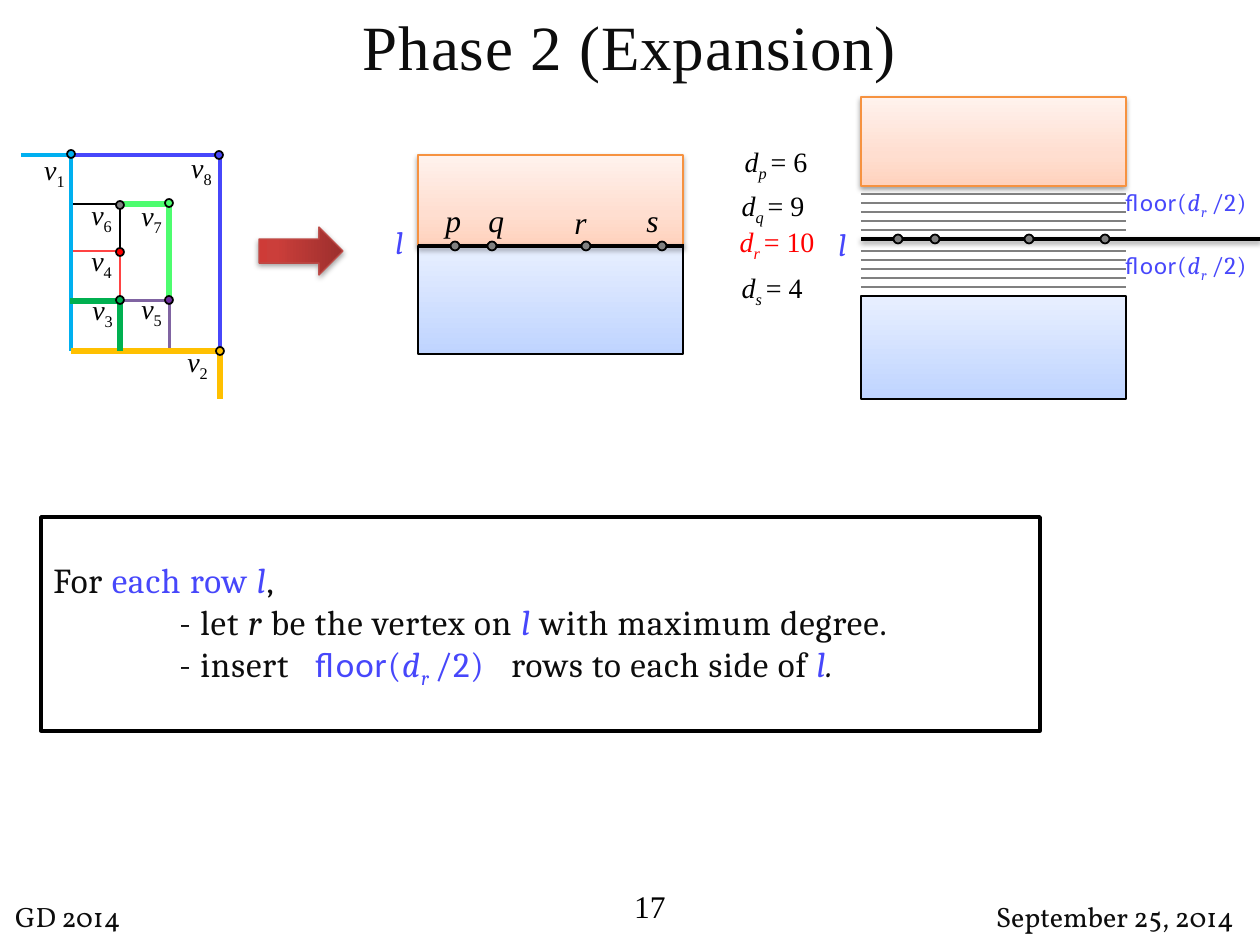
from lxml.etree import SubElement
from pptx import Presentation
from pptx.dml.color import RGBColor
from pptx.enum.shapes import MSO_CONNECTOR, MSO_SHAPE
from pptx.enum.text import MSO_ANCHOR, MSO_AUTO_SIZE, PP_ALIGN
from pptx.oxml.ns import qn
from pptx.util import Emu, Pt

SCALE = 914400 / 126
BLACK, INK, BLUE, GRAY, RED = "000000", "0D0D0D", "4747FB", "808080", "FF0000"
PEACH = [(0, "FFD2BD"), (35, "FFDED0"), (100, "FFF2ED")]
SKY = [(0, "BFD4FF"), (96, "E6EEFF")]
CRIMSON = [(0, "9C2F2D"), (80, "CB3E3A"), (100, "CE3B37")]
SERIF, BOOK, SANS, FOOTER = "Times New Roman", "Cambria", "Calibri", "Vollkorn"
LEFT, CENTER, RIGHT = PP_ALIGN.LEFT, PP_ALIGN.CENTER, PP_ALIGN.RIGHT
HALF_DEGREE = [("floor", "", BLUE, SANS), ("(", "", BLUE), ("d", "i", BLUE),
               ("r ", "i_", BLUE), ("/2)", "", BLUE)]


def px(*lengths):
    return [Emu(round(length * SCALE)) for length in lengths]


def rgb(color):
    return RGBColor.from_string(color)


class Sketch:
    """Draws styled elements on the current page."""

    def __init__(self, page):
        self.shapes = page.shapes

    def outline(self, item, color, width):
        item.line.color.rgb = rgb(color)
        item.line.width = Pt(width)

    def cast_shadow(self, effects, alpha=38):
        shadow = SubElement(effects, qn("a:outerShdw"), blurRad=str(Pt(3.1)),
                            dist=str(Pt(1.6)), dir="5400000", rotWithShape="0")
        color = SubElement(shadow, qn("a:srgbClr"), val=BLACK)
        SubElement(color, qn("a:alpha"), val=str(alpha * 1000))

    def shape(self, kind, area, fill=None, line=None, width=1.0):
        item = self.shapes.add_shape(kind, *px(*area))
        item.shadow.inherit = False
        if fill:
            item.fill.solid()
            item.fill.fore_color.rgb = rgb(fill)
        else:
            item.fill.background()
        if line:
            self.outline(item, line, width)
        else:
            item.line.fill.background()
        return item

    def gradient(self, kind, area, stops, line, width, shadow=0):
        item = self.shape(kind, area, None, line, width)
        item.fill.gradient()
        item.fill.gradient_angle = 90
        properties = item._element.spPr
        stop_list = properties.find(qn("a:gradFill")).find(qn("a:gsLst"))
        for stop in list(stop_list):
            stop_list.remove(stop)
        for position, color in stops:
            stop = SubElement(stop_list, qn("a:gs"), pos=str(position * 1000))
            SubElement(stop, qn("a:srgbClr"), val=color)
        if shadow:
            self.cast_shadow(properties.find(qn("a:effectLst")), shadow)
        return item

    def line(self, start, end, color, width, shadow=False):
        item = self.shapes.add_connector(MSO_CONNECTOR.STRAIGHT, *px(*start, *end))
        self.outline(item, color, width)
        effects = SubElement(item._element.spPr, qn("a:effectLst"))
        if shadow:
            self.cast_shadow(effects)

    def bend(self, points, color, width):
        builder = self.shapes.build_freeform(*points[0], scale=SCALE)
        builder.add_line_segments(points[1:], close=False)
        item = builder.convert_to_shape()
        item.shadow.inherit = False
        item.fill.background()
        self.outline(item, color, width)

    def dot(self, x, y, size, fill):
        area = (x - size / 2, y - size / 2, size, size)
        self.shape(MSO_SHAPE.OVAL, area, fill, BLACK)

    def fill_text(self, frame, paragraphs, size, font, color, align=LEFT,
                  spaced=False, tabs=()):
        for index, spans in enumerate(paragraphs):
            para = frame.paragraphs[0] if index == 0 else frame.add_paragraph()
            para.alignment = align
            para.font.size, para.font.name = Pt(size), font
            para.font.color.rgb = rgb(color)
            if spaced:
                para.font._rPr.set("spc", "50")
            if tabs:
                properties = para._p.get_or_add_pPr()
                tab_list = SubElement(properties, qn("a:tabLst"))
                for stop in px(*tabs):
                    SubElement(tab_list, qn("a:tab"), pos=str(stop), algn="l")
                properties.insert(0, tab_list)
            for text, flags, *style in spans:
                span = para.add_run()
                span.text = text
                if "i" in flags:
                    span.font.italic = True
                if "_" in flags:
                    span.font._rPr.set("baseline", "-25000")
                if style:
                    span.font.color.rgb = rgb(style[0])
                if len(style) > 1:
                    span.font.name = style[1]

    def label(self, area, spans, size, font=SERIF, color=BLACK, align=CENTER,
              anchor=MSO_ANCHOR.MIDDLE, wrap=True, spaced=False):
        frame = self.shapes.add_textbox(*px(*area)).text_frame
        frame.word_wrap = wrap
        frame.vertical_anchor = anchor
        if not wrap:
            frame.auto_size = MSO_AUTO_SIZE.SHAPE_TO_FIT_TEXT
        self.fill_text(frame, [spans], size, font, color, align, spaced)

    def tag(self, area, spans, size, font=SERIF, color=BLACK, spaced=False):
        self.label(area, spans, size, font, color, LEFT, MSO_ANCHOR.TOP, False, spaced)

    def panel(self, area, paragraphs, size, font, align=LEFT, kind=MSO_SHAPE.RECTANGLE,
              fill=None, line=None, **style):
        frame = self.shape(kind, area, fill, line, 2).text_frame
        frame.word_wrap = True
        frame.vertical_anchor = MSO_ANCHOR.MIDDLE
        self.fill_text(frame, paragraphs, size, font, INK, align, **style)


def draw_graph(sketch):
    bends = [
        ([(121, 204), (169, 204), (169, 298)], "4DFD6F", 3.75),
        ([(70, 204), (120, 204), (120, 253)], BLACK, 1.5),
        ([(120, 301), (170, 301), (170, 350)], "8064A2", 1.75),
        ([(70, 251), (120, 251), (120, 300)], "FF4343", 1.5),
        ([(21, 155), (71, 155), (71, 351)], "00B0F0", 2.75),
        ([(71, 351), (220, 351), (220, 399)], "FFC000", 3.75),
        ([(70, 301), (120, 301), (120, 351)], "00B050", 3.25),
        ([(74, 155), (220, 155), (220, 351)], BLUE, 2),
    ]
    vertices = [
        ("1", 71, 154, "00B0F0", 26, 157), ("2", 220, 351, "FFC000", 169, 349),
        ("3", 120, 300, "00B050", 74, 297), ("4", 120, 252, RED, 73, 248),
        ("5", 169, 300, "7030A0", 123, 296), ("6", 120, 205, GRAY, 73, 202),
        ("7", 169, 203, "4DFD6F", 123, 203), ("8", 219, 155, BLUE, 173, 155),
    ]
    for points, color, width in bends:
        sketch.bend(points, color, width)
    for index, x, y, color, left, top in vertices:
        sketch.dot(x, y, 8, color)
        sketch.label((left, top, 57, 29), [("v", "i"), (index, "_")], 16)


def draw_row(sketch, left, right, y, upper, lower, name_top):
    sketch.gradient(MSO_SHAPE.RECTANGLE, (left, upper[0], 265, upper[1]),
                    PEACH, "F69240", 0.75, 38)
    sketch.gradient(MSO_SHAPE.RECTANGLE, (left, lower[0], 265, lower[1]), SKY, BLACK, 1)
    sketch.line((left, y), (right, y), BLACK, 2, True)
    for offset in (37, 74, 168, 244):
        sketch.dot(left + offset, y, 9, GRAY)
    sketch.tag((left - 35, name_top, 35, 50), [("l", "i")], 18, BOOK, BLUE, True)


def main():
    deck = Presentation()
    deck.slide_width, deck.slide_height = px(1260, 945)
    sketch = Sketch(deck.slides.add_slide(deck.slide_layouts[6]))

    sketch.label((0, 1, 1260, 90), [("Phase 2 (Expansion)", "")], 36,
                 color=INK, anchor=MSO_ANCHOR.TOP, spaced=True)
    draw_graph(sketch)
    arrow = sketch.gradient(MSO_SHAPE.DOWN_ARROW, (277, 209, 48, 84),
                            CRIMSON, "BF4C48", 0.75, 35)
    arrow.rotation = 270

    draw_row(sketch, 418, 684, 246, (155, 90), (246, 108), 217)
    for name, left, top in [("p", 433, 195), ("q", 476, 195),
                            ("r", 562, 197), ("s", 634, 195)]:
        sketch.tag((left, top, 40, 50), [(name, "i")], 18)
    for name, degree, left, top, color in [
            ("p", 6, 711, 142, BLACK), ("q", 9, 708, 186, BLACK),
            ("r", 10, 712, 222, RED), ("s", 4, 707, 268, BLACK)]:
        sketch.label((left, top, 130, 44),
                     [("d", "i"), (f"{name} ", "i_"), (f"= {degree}", "")],
                     16, color=color)

    draw_row(sketch, 861, 1260, 239, (97, 89), (296, 103), 219)
    for top in (194, 251):
        for step in range(5):
            y = top + 9 * step
            sketch.line((861, y), (1126, y), GRAY, 0.75)
    for top in (181, 244):
        sketch.tag((1113, top, 149, 43), HALF_DEGREE, 14, BOOK, BLUE, True)

    steps = [
        [("For ", ""), ("each row ", "", BLUE), ("l", "i", BLUE), (",", "")],
        [("\t- let ", ""), ("r", "i"), (" be the vertex on ", ""),
         ("l ", "i", BLUE), ("with maximum degree.", "")],
        [("\t- insert\t", ""), *HALF_DEGREE, ("\trows to each side of ", ""),
         ("l", "i", BLUE), (".", "i")],
    ]
    sketch.panel((41, 517, 999, 214), steps, 20, BOOK, fill="FFFFFF", line=BLACK,
                 spaced=True, tabs=(126, 262, 458))

    sketch.label((384, 881, 294, 50), [("17", "")], 18, align=RIGHT)
    for text, left, width, align in [("GD 2014", 0, 194, LEFT),
                                     ("September 25, 2014", 970, 290, CENTER)]:
        sketch.panel((left, 888, width, 57), [[(text, "")]], 16, FOOTER, align,
                     MSO_SHAPE.ROUNDED_RECTANGLE)
    deck.save("out.pptx")


if __name__ == "__main__":
    main()
